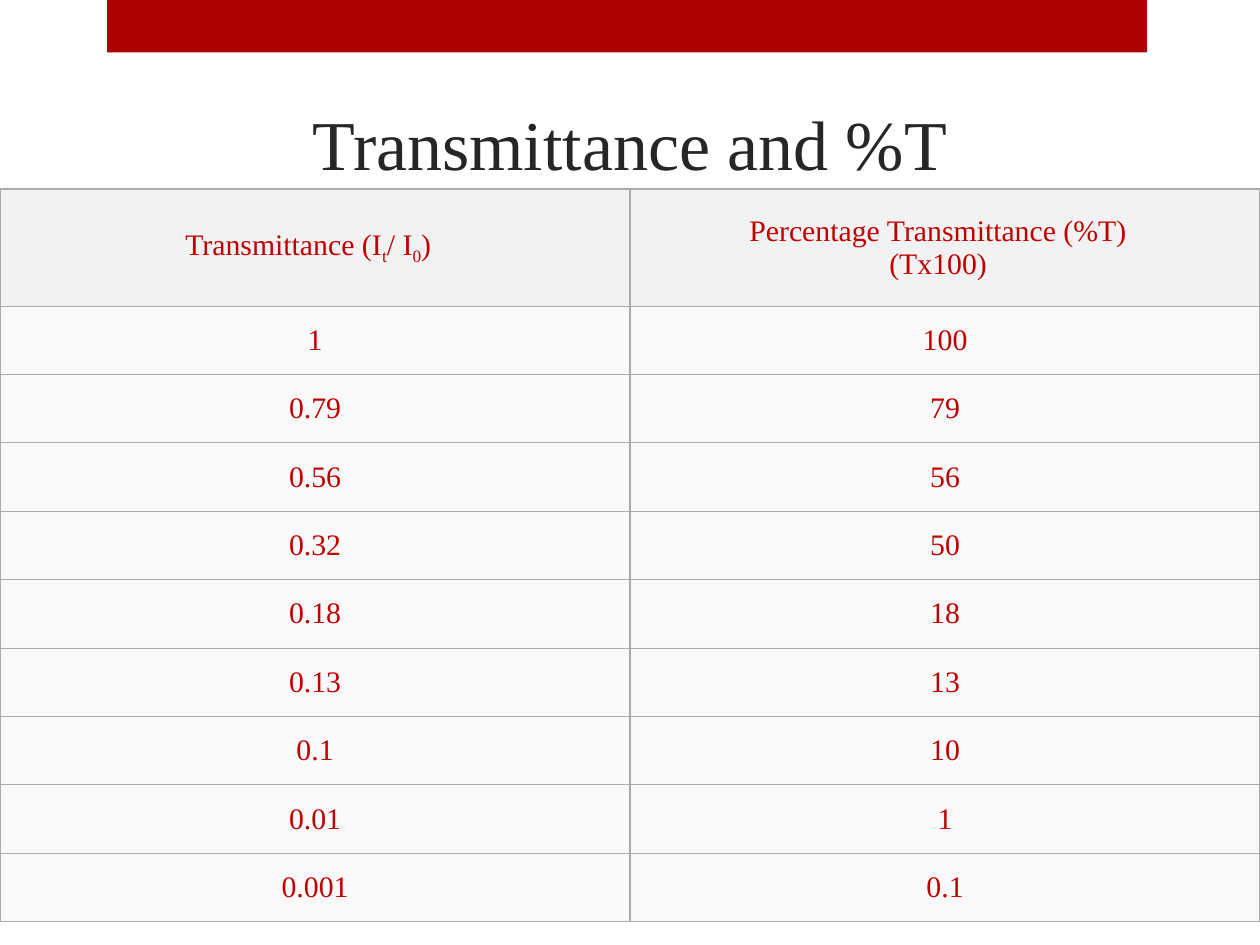
from lxml import etree
from pptx import Presentation
from pptx import util as u
from pptx.dml.color import RGBColor
from pptx.enum import shapes, text
from pptx.oxml import ns

RED = RGBColor(0xAD, 0x01, 0x01)
TABLE_RED = RGBColor(0xC0, 0x00, 0x00)
INK = RGBColor(0x26, 0x26, 0x26)
HEADER_FILL = RGBColor(0xF2, 0xF2, 0xF2)
BODY_FILL = RGBColor(0xF9, 0xF9, 0xF9)
BORDER = RGBColor(0xAA, 0xAA, 0xAA)

HEADERS = [
    [[("Transmittance (I", 0), ("t", -25), ("/ I", 0), ("0", -25), (")", 0)]],
    [[("Percentage Transmittance (%T)", 0)], [("(Tx100)", 0)]],
]
VALUES = [
    ("1", "100"), ("0.79", "79"), ("0.56", "56"),
    ("0.32", "50"), ("0.18", "18"), ("0.13", "13"),
    ("0.1", "10"), ("0.01", "1"), ("0.001", "0.1"),
]


class SlideBuilder:
    """Hold the text style and the current slide, and add elements to it."""

    def __init__(self, slide, font="Times New Roman"):
        self.slide = slide
        self.font = font

    def add_text(self, frame, paragraphs, size, color):
        for index, runs in enumerate(paragraphs):
            paragraph = frame.add_paragraph() if index else frame.paragraphs[0]
            paragraph.alignment = text.PP_ALIGN.CENTER
            for content, baseline in runs:
                run = paragraph.add_run()
                run.text = content
                run.font.name = self.font
                run.font.size = u.Pt(size)
                run.font.bold = False
                run.font.color.rgb = color
                if baseline:
                    run.font._element.set("baseline", str(baseline * 1000))

    def bar(self, left, top, width, height, color):
        shape = self.slide.shapes.add_shape(
            shapes.MSO_SHAPE.RECTANGLE,
            u.Cm(left), u.Cm(top), u.Cm(width), u.Cm(height))
        shape.shadow.inherit = False
        shape.fill.solid()
        shape.fill.fore_color.rgb = color
        shape.line.fill.background()

    def title(self, content, left, top, width, height):
        title = self.slide.shapes.title
        title.left, title.top = u.Cm(left), u.Cm(top)
        title.width, title.height = u.Cm(width), u.Cm(height)
        title.text_frame.word_wrap = True
        title.text_frame.vertical_anchor = text.MSO_ANCHOR.BOTTOM
        self.add_text(title.text_frame, [[(content, 0)]], 40, INK)

    def cell(self, cell, paragraphs, fill, right_margin):
        cell.fill.solid()
        cell.fill.fore_color.rgb = fill
        cell.vertical_anchor = text.MSO_ANCHOR.MIDDLE
        cell.margin_right = u.Cm(right_margin)
        self.add_text(cell.text_frame, paragraphs, 17, TABLE_RED)
        properties = cell._tc.get_or_add_tcPr()
        for index, side in enumerate(("lnL", "lnR", "lnT", "lnB")):
            line = etree.Element(ns.qn(f"a:{side}"), w=str(u.Pt(0.75)))
            solid = etree.SubElement(line, ns.qn("a:solidFill"))
            etree.SubElement(solid, ns.qn("a:srgbClr"), val=str(BORDER))
            properties.insert(index, line)

    def table(self, headers, values, top, width, header_height, row_height):
        height = header_height + row_height * len(values)
        table = self.slide.shapes.add_table(
            len(values) + 1, len(headers),
            0, u.Cm(top), u.Cm(width), u.Cm(height)).table
        table.first_row = table.horz_banding = False
        for row in table.rows:
            row.height = u.Cm(row_height)
        table.rows[0].height = u.Cm(header_height)
        for column, paragraphs in enumerate(headers):
            self.cell(table.cell(0, column), paragraphs, HEADER_FILL, 0.53)
        for row, record in enumerate(values, 1):
            for column, value in enumerate(record):
                self.cell(table.cell(row, column), [[(value, 0)]], BODY_FILL, 0.25)


def main():
    presentation = Presentation()
    presentation.slide_width = u.Cm(25.4)
    presentation.slide_height = u.Cm(19.05)
    slide = presentation.slides.add_slide(presentation.slide_layouts[5])
    builder = SlideBuilder(slide)
    builder.bar(2.16, 0, 20.96, 1.06, RED)
    builder.title("Transmittance and %T", 2.54, 0.64, 20.32, 3.2)
    builder.table(HEADERS, VALUES, top=3.81, width=25.4,
                  header_height=2.36, row_height=1.38)
    presentation.save("out.pptx")


if __name__ == "__main__":
    main()
